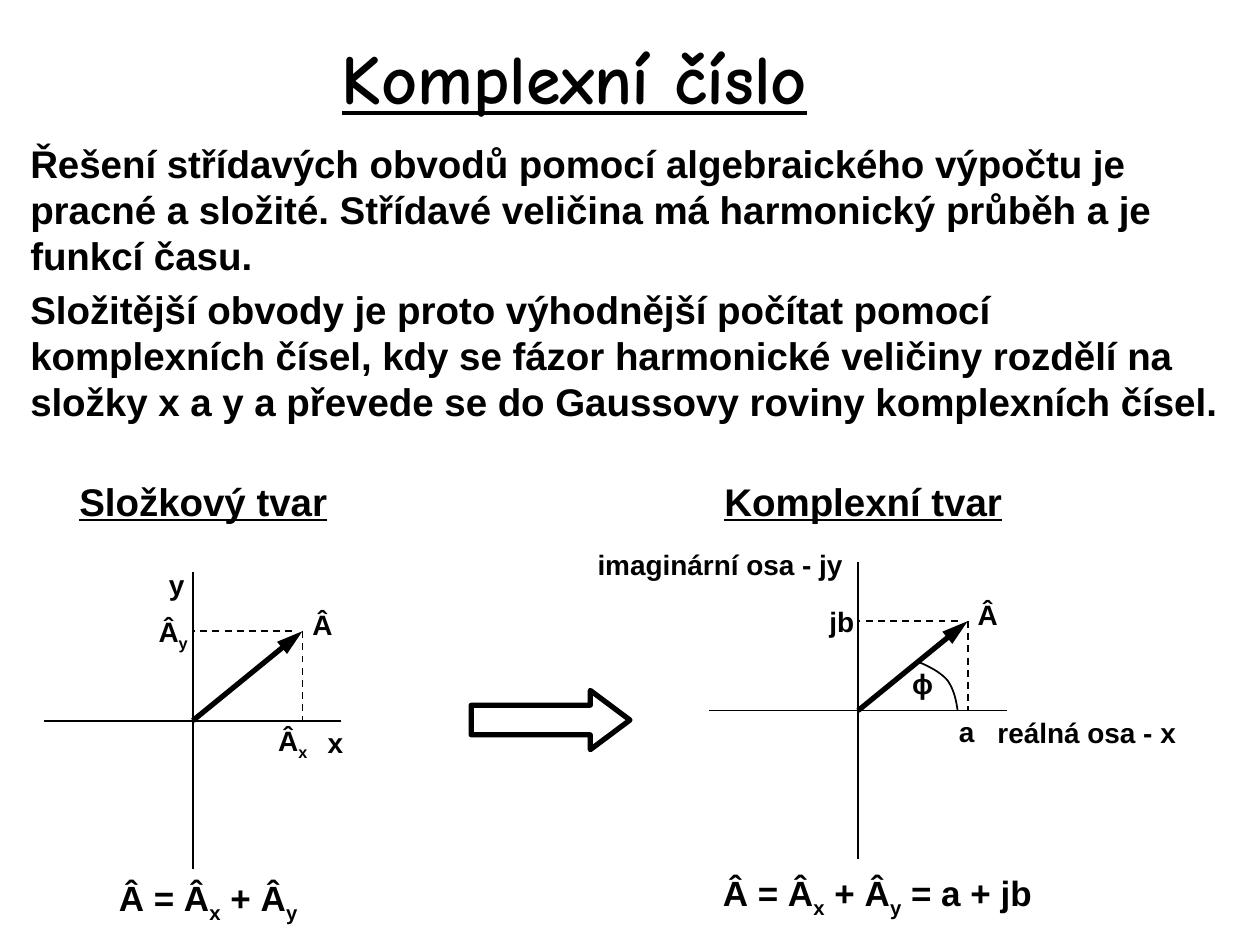
from lxml import etree
from pptx import Presentation
from pptx.dml.color import RGBColor
from pptx.enum import dml, shapes, text
from pptx.oxml.ns import qn
from pptx.util import Inches, Pt

BLACK = RGBColor(0, 0, 0)
LEFT, MID, RIGHT = text.PP_ALIGN.LEFT, text.PP_ALIGN.CENTER, text.PP_ALIGN.RIGHT
INTRO = [
    "Řešení střídavých obvodů pomocí algebraického výpočtu je pracné a složité. "
    "Střídavé veličina má harmonický průběh a je funkcí času.",
    "Složitější obvody je proto výhodnější počítat pomocí komplexních čísel, "
    "kdy se fázor harmonické veličiny rozdělí na složky x a y a převede se "
    "do Gaussovy roviny komplexních čísel.",
]
SUM = ["Â = Â", "_x", " + Â", "_y"]


def add_run(para, words, size, line=False, face="Arial"):
    """Add one bold run; a leading underscore makes it a subscript."""
    run = para.add_run()
    run.text = words.removeprefix("_")
    font = run.font
    font.name, font.size, font.bold = face, Pt(size), True
    font.color.rgb = BLACK
    if line:
        font.underline = True
    if words.startswith("_"):
        run._r.get_or_add_rPr().set("baseline", "-25000")


def add_text(slide, box, paras, size, align=LEFT, wrap=True, line=False):
    """Add a text box; each paragraph is a list of runs."""
    frame = slide.shapes.add_textbox(*map(Inches, box)).text_frame
    frame.word_wrap = wrap
    frame.margin_left = frame.margin_right = Inches(0.04)
    frame.margin_top = frame.margin_bottom = Inches(0.04)
    if align != LEFT:
        frame.vertical_anchor = text.MSO_ANCHOR.MIDDLE
    for i, runs in enumerate(paras):
        para = frame.add_paragraph() if i else frame.paragraphs[0]
        para.alignment = align
        if i:
            para.space_before = Pt(size * 0.2)
        for words in runs:
            add_run(para, words, size, line)


def add_label(slide, x, y, wide, *runs):
    add_text(slide, (x, y, wide, 0.35), [runs], 16, RIGHT, wrap=False)


def add_line(slide, start, end, width=1, dash=False, head=False):
    line = slide.shapes.add_connector(
        shapes.MSO_CONNECTOR.STRAIGHT, *map(Inches, (*start, *end)))
    line.line.color.rgb = BLACK
    line.line.width = Pt(width)
    if dash:
        line.line.dash_style = dml.MSO_LINE.DASH
    if head:
        etree.SubElement(line.line._get_or_add_ln(), qn("a:tailEnd"),
                         type="triangle", w="med", len="lg")
    etree.SubElement(line._element.spPr, qn("a:effectLst"))


def add_plane(slide, x, y):
    """Draw axes crossing at x, y with a phasor and its projections."""
    arm, tip_x, tip_y = 1.18, x + 0.87, y - 0.71
    add_line(slide, (x, y - arm), (x, y + arm))
    add_line(slide, (x + arm, y), (x - arm, y))
    add_line(slide, (x, y), (tip_x, tip_y), width=3, head=True)
    add_line(slide, (tip_x, tip_y), (tip_x, y), dash=True)
    add_line(slide, (tip_x - 0.08, tip_y), (x, tip_y), dash=True)
    add_label(slide, x + 0.91, y - 0.94, 0.24, "Â")


def add_curve(slide, start, curves, steps=12):
    """Draw an open outline through cubic curves of two handles and an end."""
    pen = slide.shapes.build_freeform(*map(Inches, start))
    for one, two, end in curves:
        dots = []
        for i in range(1, steps + 1):
            t = i / steps
            dots.append([
                Inches((1 - t) ** 3 * a + 3 * t * (1 - t) ** 2 * b
                       + 3 * t * t * (1 - t) * c + t ** 3 * d)
                for a, b, c, d in zip(start, one, two, end)])
        pen.add_line_segments(dots, close=False)
        start = end
    style(pen.convert_to_shape(), 1)


def style(shape, width):
    shape.shadow.inherit = False
    shape.fill.background()
    shape.line.color.rgb = BLACK
    shape.line.width = Pt(width)


def add_title(slide, words):
    title = slide.shapes.title
    title.left, title.top, title.width, title.height = map(Inches, (2.16, 0.21, 4.8, 0.79))
    title.text_frame.vertical_anchor = text.MSO_ANCHOR.MIDDLE
    para = title.text_frame.paragraphs[0]
    para.alignment = MID
    add_run(para, words, 40, line=True, face="Comic Neue")


def add_arrow(slide):
    arrow = slide.shapes.add_shape(
        shapes.MSO_SHAPE.RIGHT_ARROW, *map(Inches, (3.74, 5.48, 1.26, 0.47)))
    arrow.adjustments[0], arrow.adjustments[1] = 0.5, 0.67
    style(arrow, 3)


def main():
    deck = Presentation()
    deck.slide_width, deck.slide_height = Inches(10), Inches(7.5)
    slide = deck.slides.add_slide(deck.slide_layouts[5])

    add_title(slide, "Komplexní číslo")
    add_text(slide, (0.2, 1.07, 9.61, 2.38), [[words] for words in INTRO], 22)

    add_text(slide, (0.59, 3.75, 2.13, 0.45), [["Složkový tvar"]], 22, line=True)
    add_plane(slide, 1.53, 5.72)
    add_label(slide, 2.56, 5.72, 0.2, "x")
    add_label(slide, 1.3, 4.46, 0.2, "y")
    add_label(slide, 2.16, 5.72, 0.32, "Â", "_x")
    add_label(slide, 1.21, 4.85, 0.32, "Â", "_y")
    add_text(slide, (0.57, 6.94, 1.83, 0.41), [SUM], 20, RIGHT)

    add_arrow(slide)

    add_text(slide, (5.71, 3.75, 2.36, 0.45), [["Komplexní tvar"]], 22, line=True)
    add_plane(slide, 6.81, 5.64)
    add_text(slide, (7.84, 5.64, 1.57, 0.35), [["reálná osa - x"]], 16, MID)
    add_text(slide, (4.69, 4.3, 2.05, 0.35), [["imaginární osa - jy"]], 16, MID)
    add_label(slide, 7.57, 5.63, 0.2, "a")
    add_label(slide, 6.54, 4.76, 0.28, "jb")
    add_curve(slide, (7.28, 5.25), [
        ((7.38, 5.29), (7.47, 5.34), (7.52, 5.4)),
        ((7.57, 5.47), (7.59, 5.56), (7.6, 5.64))])
    add_label(slide, 7.2, 5.25, 0.21, "ϕ")
    add_text(slide, (5.55, 6.9, 2.68, 0.41), [SUM + [" = a + jb"]], 20, RIGHT)

    deck.save("out.pptx")


if __name__ == "__main__":
    main()
